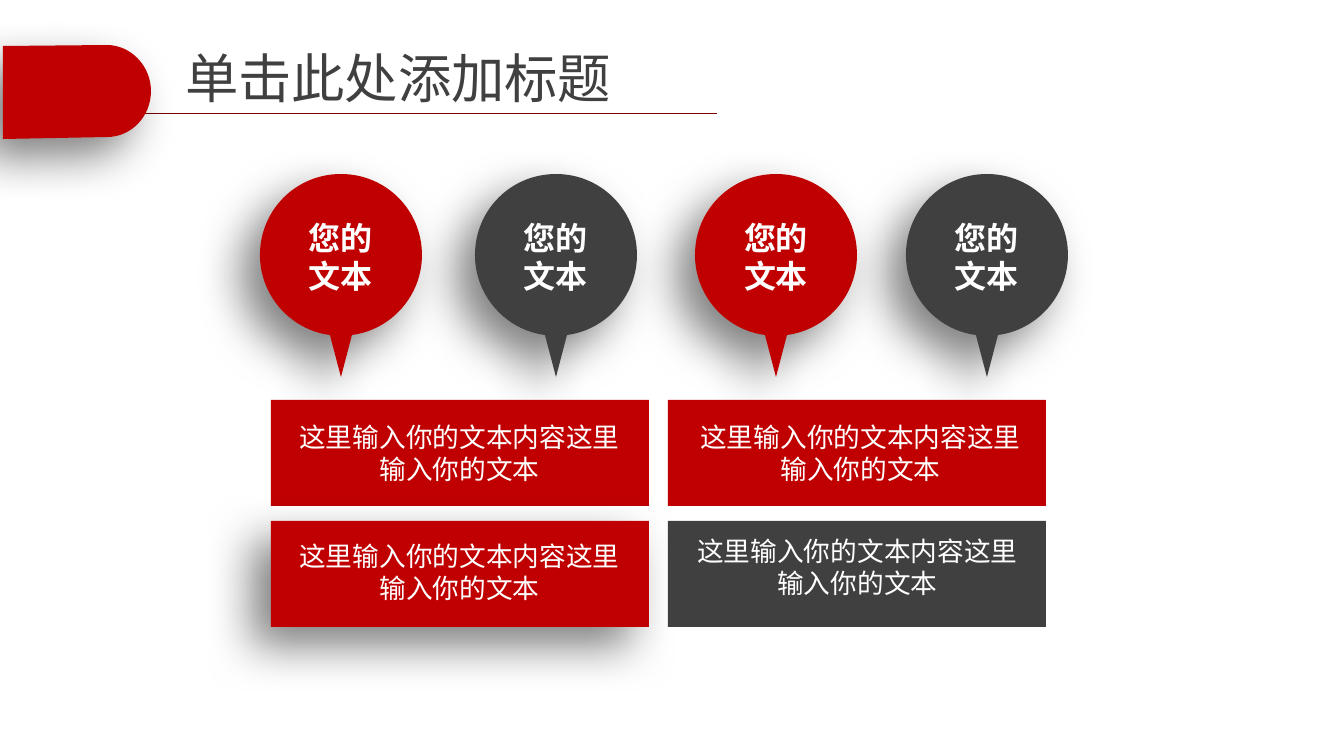
from pptx import Presentation
from pptx import util as u
from pptx.dml.color import RGBColor
from pptx.enum import shapes, text
from pptx.oxml import parse_xml
from pptx.oxml.ns import nsdecls, qn

PX = 9525
RED, GREY, WHITE, LINE = "C00000", "404040", "FFFFFF", "760000"
CJK = "Noto Sans CJK SC"
BODY = "这里输入你的文本内容这里输入你的文本"


def px(n):
    return u.Emu(n * PX)


def color(value):
    return RGBColor.from_string(value)


def add_shadow(s):
    effects = s._element.spPr.find(qn("a:effectLst"))
    effects.append(parse_xml(
        f'<a:outerShdw {nsdecls("a")} blurRad="{u.Pt(35)}" dist="{u.Pt(20)}" '
        'dir="8100000" algn="tr" rotWithShape="0"><a:srgbClr val="000000">'
        '<a:alpha val="50000"/></a:srgbClr></a:outerShdw>'))


def paint(s, fill, shadow=False):
    s.shadow.inherit = False
    s.fill.solid()
    s.fill.fore_color.rgb = color(fill)
    s.line.fill.background()
    if shadow:
        add_shadow(s)


def write(s, lines, size=20, font=CJK, fill=WHITE, bold=False,
          align=text.PP_ALIGN.CENTER, insets=(10, 5, 10, 5)):
    tf = s.text_frame
    tf.word_wrap = True
    tf.vertical_anchor = text.MSO_ANCHOR.MIDDLE
    tf.margin_left, tf.margin_top, tf.margin_right, tf.margin_bottom = map(px, insets)
    for i, line in enumerate(lines):
        p = tf.paragraphs[0] if i == 0 else tf.add_paragraph()
        p.alignment = align
        p.line_spacing = u.Pt(size * 1.2)
        r = p.add_run()
        r.text = line
        r.font.size = u.Pt(size)
        r.font.name = font
        r.font.bold = bold
        r.font.color.rgb = color(fill)
        r._r.get_or_add_rPr().find(qn("a:latin")).addnext(
            parse_xml(f'<a:ea {nsdecls("a")} typeface="{CJK}"/>'))


def add_outline(parent, start, segments, fill):
    builder = parent.build_freeform(*start, scale=PX)
    builder.add_line_segments([point for segment in segments for point in segment])
    s = builder.convert_to_shape()
    steps = iter(s._element.findall(".//" + qn("a:lnTo")))
    for segment in segments:
        group = [next(steps) for _ in segment]
        if len(group) == 3:
            curve = parse_xml(f'<a:cubicBezTo {nsdecls("a")}/>')
            group[0].addprevious(curve)
            for step in group:
                curve.append(step[0])
                step.getparent().remove(step)
    paint(s, fill, shadow=True)
    return s


def add_rule(parent, x1, x2, y):
    s = parent.add_connector(shapes.MSO_CONNECTOR.STRAIGHT, px(x1), px(y), px(x2), px(y))
    s.line.color.rgb = color(LINE)
    s.line.width = u.Pt(0.75)
    s._element.spPr.append(parse_xml(f'<a:effectLst {nsdecls("a")}/>'))


def add_tab(parent):
    add_outline(parent, (3, 46), [
        [(107, 45)],
        [(131, 45), (151, 66), (151, 91)],
        [(151, 117), (131, 137), (107, 137)],
        [(3, 139)],
        [(3, 46)],
    ], RED)


def add_pin(parent, cx, fill):
    s = add_outline(parent, (cx, 174), [
        [(cx + 45, 174), (cx + 81, 210), (cx + 81, 255)],
        [(cx + 81, 296), (cx + 50, 330), (cx + 11, 335)],
        [(cx, 377)],
        [(cx - 11, 335)],
        [(cx - 50, 330), (cx - 81, 296), (cx - 81, 255)],
        [(cx - 81, 210), (cx - 45, 174), (cx, 174)],
    ], fill)
    write(s, ["您的", "文本"], size=24, bold=True, insets=(10, 5, 10, 43))


def add_card(parent, x, y, fill, label, shadow=False):
    group = parent.add_group_shape().shapes
    s = group.add_shape(shapes.MSO_SHAPE.RECTANGLE, px(x), px(y), px(378), px(106))
    paint(s, fill, shadow)
    write(group.add_textbox(*map(px, label)), [BODY])


def main():
    prs = Presentation()
    prs.slide_width, prs.slide_height = px(1344), px(756)
    parent = prs.slides.add_slide(prs.slide_layouts[6]).shapes

    add_rule(parent, 88, 717, 114)
    add_tab(parent)

    for cx, fill in zip((341, 556, 776, 987), (RED, GREY, RED, GREY)):
        add_pin(parent, cx, fill)

    left, right, top, bottom = 271, 668, 400, 521
    add_card(parent, left, top, RED, (288, 415, 343, 76))
    add_card(parent, right, top, RED, (685, 415, 351, 76))
    add_card(parent, left, bottom, RED, (288, 534, 343, 75), shadow=True)
    add_card(parent, right, bottom, GREY, (679, 530, 357, 74))

    title = parent.add_textbox(px(173), px(30), px(909), px(95))
    write(title, ["单击此处添加标题"], size=40, font="Arial", fill=GREY,
          align=text.PP_ALIGN.LEFT, insets=(12, 6, 12, 6))

    prs.save("out.pptx")


if __name__ == "__main__":
    main()
